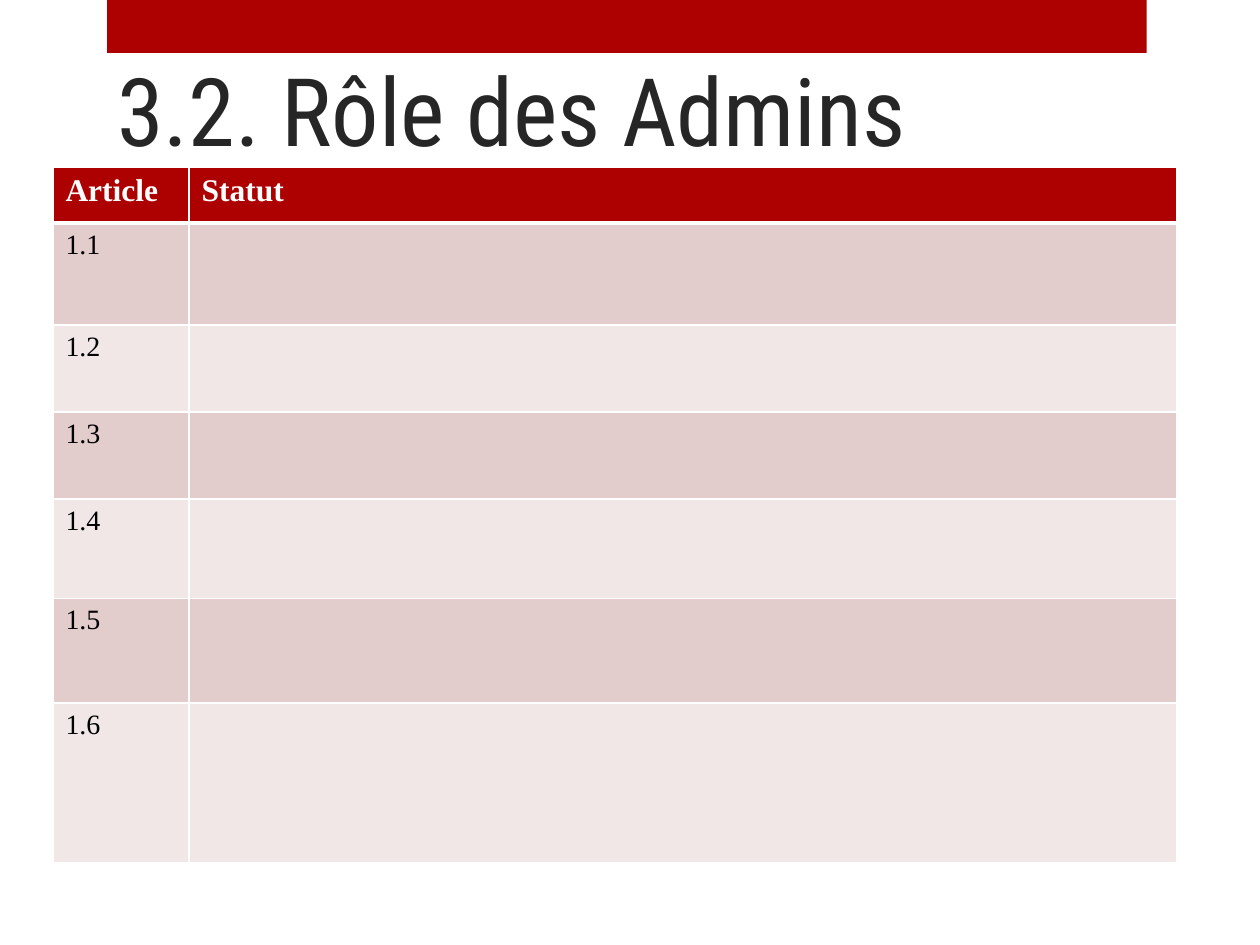
from dataclasses import dataclass

from lxml import etree
from pptx import Presentation
from pptx.dml.color import RGBColor
from pptx.enum.shapes import MSO_SHAPE
from pptx.enum.text import MSO_ANCHOR, MSO_AUTO_SIZE, PP_ALIGN
from pptx.oxml.ns import qn
from pptx.util import Inches, Pt

RECTANGLE = MSO_SHAPE.RECTANGLE
BOTTOM = MSO_ANCHOR.BOTTOM
LEFT = PP_ALIGN.LEFT
NO_AUTOFIT = MSO_AUTO_SIZE.NONE
TITLE_ONLY = 5


@dataclass(frozen=True)
class Theme:
    accent: str = "AD0101"
    title_ink: str = "262626"
    ink: str = "000000"
    white: str = "FFFFFF"
    bands: tuple = ("E3CCCC", "F1E7E7")
    title_font: str = "Roboto Condensed"
    table_font: str = "Times New Roman"
    title_size: int = 54
    header_size: int = 18
    body_size: int = 16
    rule: int = 1
    header_rule: int = 3


class SlideBuilder:
    def __init__(self, slide, theme):
        self.slide = slide
        self.theme = theme

    def add_run(self, paragraph, text, font, size, color, bold=False):
        run = paragraph.add_run()
        run.text = text
        run.font.name = font
        run.font.size = Pt(size)
        run.font.bold = bold
        run.font.color.rgb = RGBColor.from_string(color)

    def bar(self, left, top, width, height):
        bar = self.slide.shapes.add_shape(
            RECTANGLE, Inches(left), Inches(top), Inches(width), Inches(height))
        bar.shadow.inherit = False
        bar.fill.solid()
        bar.fill.fore_color.rgb = RGBColor.from_string(self.theme.accent)
        bar.line.fill.background()

    def title(self, text, left, top, width, height):
        title = self.slide.shapes.title
        title.left, title.top = Inches(left), Inches(top)
        title.width, title.height = Inches(width), Inches(height)
        frame = title.text_frame
        frame.auto_size = NO_AUTOFIT
        frame.word_wrap = True
        frame.vertical_anchor = BOTTOM
        frame.margin_bottom = Inches(0.02)
        paragraph = frame.paragraphs[0]
        paragraph.alignment = LEFT
        self.add_run(paragraph, text, self.theme.title_font,
                     self.theme.title_size, self.theme.title_ink)

    def borders(self, cell, top, bottom):
        properties = cell._tc.get_or_add_tcPr()
        rule = self.theme.rule
        for side, width in (("L", rule), ("R", rule), ("T", top), ("B", bottom)):
            line = etree.SubElement(properties, qn(f"a:ln{side}"), w=str(Pt(width)))
            fill = etree.SubElement(line, qn("a:solidFill"))
            etree.SubElement(fill, qn("a:srgbClr"), val=self.theme.white)

    def table(self, rows, left, top, column_widths, row_heights):
        theme = self.theme
        table = self.slide.shapes.add_table(
            len(rows), len(column_widths), Inches(left), Inches(top),
            Inches(sum(column_widths)), Inches(sum(row_heights))).table
        for column, width in zip(table.columns, column_widths):
            column.width = Inches(width)
        for index, (texts, height) in enumerate(zip(rows, row_heights)):
            table.rows[index].height = Inches(height)
            header = index == 0
            color = theme.accent if header else theme.bands[(index - 1) % 2]
            above = theme.header_rule if index == 1 else theme.rule
            below = theme.header_rule if header else theme.rule
            for cell, text in zip(table.rows[index].cells, texts):
                self.borders(cell, above, below)
                cell.fill.solid()
                cell.fill.fore_color.rgb = RGBColor.from_string(color)
                if text:
                    self.add_run(cell.text_frame.paragraphs[0], text, theme.table_font,
                                 theme.header_size if header else theme.body_size,
                                 theme.white if header else theme.ink, header)


def main():
    presentation = Presentation()
    presentation.slide_width = Inches(10)
    presentation.slide_height = Inches(7.5)
    slide = presentation.slides.add_slide(presentation.slide_layouts[TITLE_ONLY])
    builder = SlideBuilder(slide, Theme())

    # Top band and heading
    builder.bar(0.85, 0, 8.25, 0.42)
    builder.title("3.2. Rôle des Admins", 0.83, -0.42, 7.42, 1.75)

    # Status of each article
    articles = [(f"1.{number}", "") for number in range(1, 7)]
    builder.table([("Article", "Statut"), *articles], 0.42, 1.33,
                  column_widths=(1.08, 7.84),
                  row_heights=(0.44, 0.81, 0.69, 0.69, 0.79, 0.83, 1.27))

    presentation.save("out.pptx")


if __name__ == "__main__":
    main()
